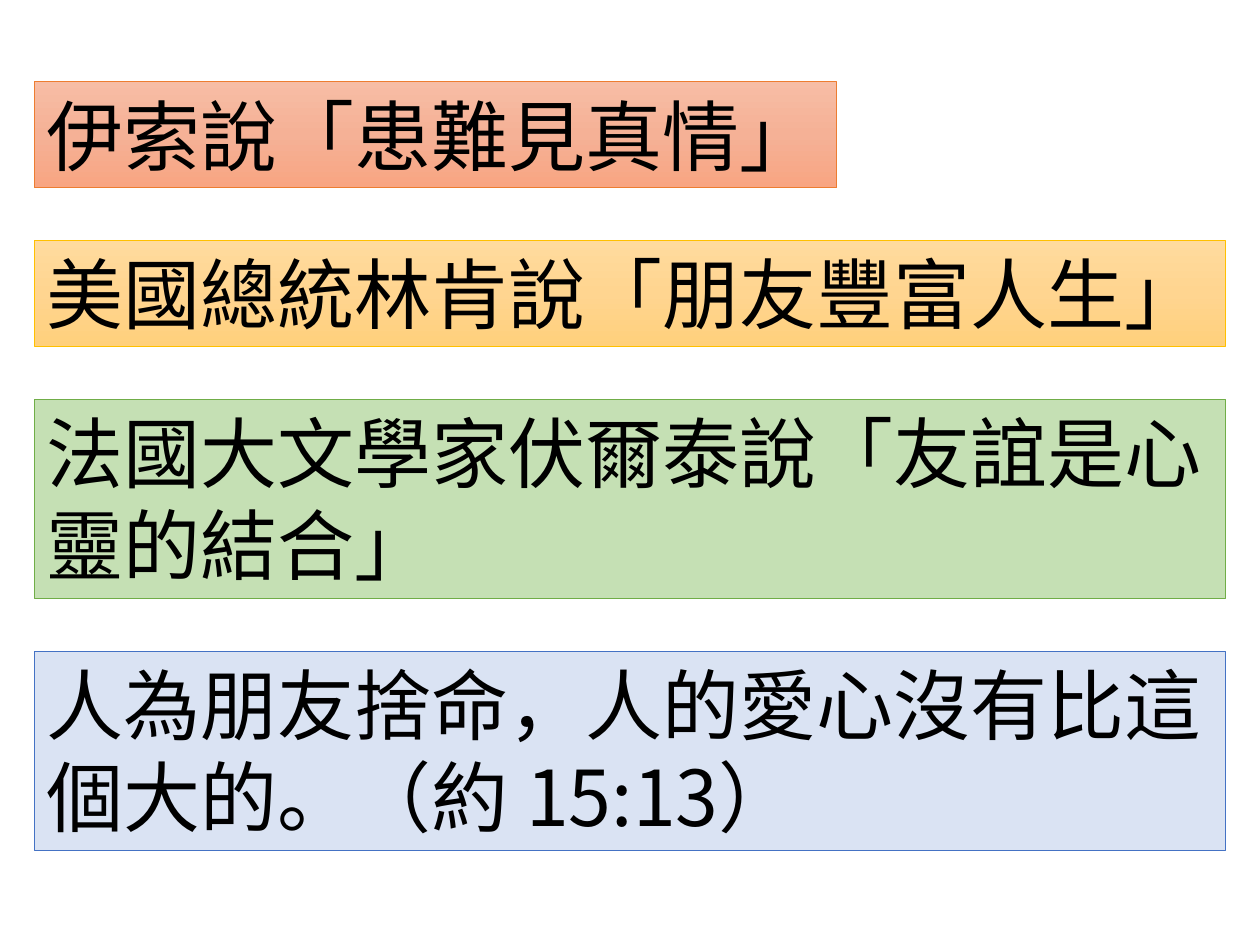
from copy import deepcopy
from dataclasses import dataclass

from pptx import Presentation
from pptx.dml.color import RGBColor
from pptx.enum.text import MSO_AUTO_SIZE
from pptx.oxml.ns import qn
from pptx.util import Pt

FIT_SHAPE = MSO_AUTO_SIZE.SHAPE_TO_FIT_TEXT
BLANK_LAYOUT = 6


@dataclass(frozen=True)
class Theme:
    font: str = "Noto Sans CJK SC"
    size: float = 44
    text: str = "000000"
    line_width: float = 0.5
    coral: tuple = ("F7BDA5", "F5B196", "F8A582")
    amber: tuple = ("FFDB9E", "FFD590", "FFD07C")
    green: tuple = ("C5E0B4",)
    blue: tuple = ("DAE3F3",)
    coral_line: str = "ED7D31"
    amber_line: str = "FFC000"
    green_line: str = "70AD47"
    blue_line: str = "4472C4"


THEME = Theme()

# Layout in points
LEFT, TOP, GAP = 19.5, 46.8, 30.2
FULL_WIDTH, SHORT_WIDTH = 681, 458.6
ONE_LINE, TWO_LINES = 60.5, 113.8

# Text, width, height, wraps, fill colours, line colour
QUOTES = [
    ("伊索說「患難見真情」", SHORT_WIDTH, ONE_LINE, False,
     THEME.coral, THEME.coral_line),
    ("美國總統林肯說「朋友豐富人生」", FULL_WIDTH, ONE_LINE, False,
     THEME.amber, THEME.amber_line),
    ("法國大文學家伏爾泰說「友誼是心靈的結合」", FULL_WIDTH, TWO_LINES, True,
     THEME.green, THEME.green_line),
    ("人為朋友捨命，人的愛心沒有比這個大的。（約 15:13）", FULL_WIDTH, TWO_LINES, True,
     THEME.blue, THEME.blue_line),
]


def set_format(target, values):
    for name, value in values.items():
        setattr(target, name, value)


def fill_box(box, colours):
    """Fill with one colour, or with an even top-to-bottom gradient."""
    fill = box.fill
    if len(colours) == 1:
        fill.solid()
        fill.fore_color.rgb = RGBColor.from_string(colours[0])
        return
    fill.gradient()
    fill.gradient_angle = 270
    stop_list = box._element.spPr.find(qn("a:gradFill")).find(qn("a:gsLst"))
    while len(stop_list) < len(colours):
        stop_list.append(deepcopy(stop_list[0]))
    for index, (stop, colour) in enumerate(zip(fill.gradient_stops, colours)):
        stop.position = index / (len(colours) - 1)
        stop.color.rgb = RGBColor.from_string(colour)


def write_text(box, text, wraps):
    frame = box.text_frame
    set_format(frame, {"word_wrap": wraps, "auto_size": FIT_SHAPE})
    span = frame.paragraphs[0].add_run()
    span.text = text
    set_format(span.font, {"name": THEME.font, "size": Pt(THEME.size)})
    span.font.color.rgb = RGBColor.from_string(THEME.text)
    # East Asian typeface
    latin = span.font._element.find(qn("a:latin"))
    east_asian = latin.makeelement(qn("a:ea"), {"typeface": THEME.font})
    latin.addnext(east_asian)


def add_quote(page, top, text, width, height, wraps, colours, line_colour):
    box = page.shapes.add_textbox(Pt(LEFT), Pt(top), Pt(width), Pt(height))
    fill_box(box, colours)
    box.line.color.rgb = RGBColor.from_string(line_colour)
    box.line.width = Pt(THEME.line_width)
    write_text(box, text, wraps)


def main():
    deck = Presentation()
    set_format(deck, {"slide_width": Pt(720), "slide_height": Pt(540)})
    page = deck.slides.add_slide(deck.slide_layouts[BLANK_LAYOUT])

    # Quotes stacked with an equal gap
    top = TOP
    for quote in QUOTES:
        add_quote(page, top, *quote)
        top += quote[2] + GAP

    deck.save("out.pptx")


if __name__ == "__main__":
    main()
